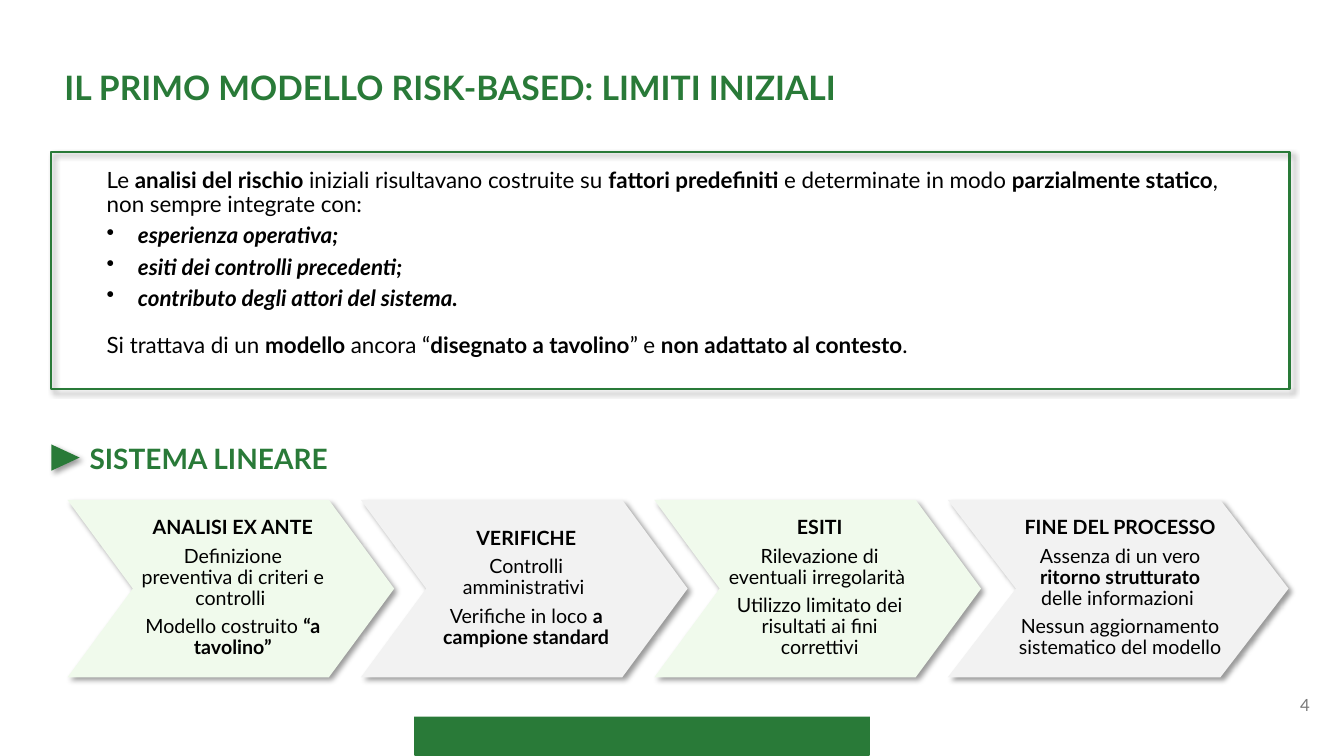
from lxml import etree
from pptx import Presentation
from pptx.dml.color import RGBColor
from pptx.enum.shapes import MSO_SHAPE
from pptx.enum.text import MSO_ANCHOR, PP_ALIGN
from pptx.oxml import parse_xml
from pptx.oxml.ns import qn
from pptx.util import Inches, Pt

RECTANGLE = MSO_SHAPE.RECTANGLE
TRIANGLE = MSO_SHAPE.ISOSCELES_TRIANGLE
MIDDLE = MSO_ANCHOR.MIDDLE
TOP = MSO_ANCHOR.TOP
LEFT, CENTER, RIGHT = PP_ALIGN.LEFT, PP_ALIGN.CENTER, PP_ALIGN.RIGHT

FONT = "Lato"
COLORS = {
    "green": "297A38",
    "pale_green": "F0FAEC",
    "pale_gray": "F2F2F2",
    "gray": "797979",
    "black": "000000",
    "white": "FFFFFF",
}
SHADOW = (
    '<a:outerShdw xmlns:a="http://schemas.openxmlformats.org/drawingml/2006/main" '
    'blurRad="50800" dist="38100" dir="2700000" algn="tl" rotWithShape="0">'
    '<a:srgbClr val="000000"><a:alpha val="40000"/></a:srgbClr></a:outerShdw>'
)

RISK_INTRO = (
    "Le *analisi del rischio *iniziali risultavano costruite su *fattori predefiniti *"
    "e determinate in modo *parzialmente statico*, non sempre integrate con:"
)
RISK_BULLETS = [
    "esperienza operativa;",
    "esiti dei controlli precedenti;",
    "contributo degli attori del sistema.",
]
RISK_CONCLUSION = (
    "Si trattava di un *modello *ancora “*disegnato a tavolino*” e "
    "*non adattato al contesto*."
)
STEPS = [
    ("ANALISI EX ANTE", "Definizione preventiva di criteri e controlli ",
     "Modello costruito *“a tavolino”*"),
    ("VERIFICHE", "Controlli amministrativi ",
     "Verifiche in loco *a campione standard*"),
    ("ESITI", "Rilevazione di eventuali irregolarità ",
     "Utilizzo limitato dei risultati ai fini correttivi"),
    ("FINE DEL PROCESSO", "Assenza di un vero *ritorno strutturato *delle informazioni ",
     "Nessun aggiornamento sistematico del modello"),
]


def color(name):
    return RGBColor.from_string(COLORS[name])


def style_shape(shape, fill=None, line=None, shadow=False):
    if fill:
        shape.fill.solid()
        shape.fill.fore_color.rgb = color(fill)
    else:
        shape.fill.background()
    if line:
        shape.line.color.rgb = color(line)
        shape.line.width = Pt(1.5)
    else:
        shape.line.fill.background()
    shape.shadow.inherit = False
    if shadow:
        shape._element.spPr.find(qn("a:effectLst")).append(parse_xml(SHADOW))


def add_box(slide, left, top, width, height, kind=RECTANGLE, **style):
    shape = slide.shapes.add_shape(
        kind, Inches(left), Inches(top), Inches(width), Inches(height))
    style_shape(shape, **style)
    return shape


def add_text_box(slide, left, top, width, height, anchor=TOP):
    text_box = slide.shapes.add_textbox(
        Inches(left), Inches(top), Inches(width), Inches(height))
    frame = text_box.text_frame
    frame.word_wrap = True
    frame.vertical_anchor = anchor
    return frame


def write_paragraph(frame, text, size, ink="black", align=LEFT, bold=False,
                    italic=False, bullet=False, spaced=False):
    paragraph = frame.paragraphs[0]
    if paragraph.runs:
        paragraph = frame.add_paragraph()
    if bullet:
        properties = paragraph._p.get_or_add_pPr()
        properties.set("marL", str(Inches(0.31)))
        properties.set("indent", str(-Inches(0.31)))
        etree.SubElement(properties, qn("a:buChar")).set("char", "•")
    paragraph.alignment = align
    if spaced:
        paragraph.line_spacing = 0.9
        paragraph.space_after = Pt(5)
    paragraph.font.name = FONT
    paragraph.font.size = Pt(size)
    paragraph.font.color.rgb = color(ink)
    paragraph.font.bold = bold
    paragraph.font.italic = italic
    for index, piece in enumerate(text.split("*")):
        if piece:
            run = paragraph.add_run()
            run.text = piece
            if index % 2:
                run.font.bold = True
    return paragraph


def add_heading(slide, text, size, left, top, width, height):
    frame = add_text_box(slide, left, top, width, height)
    write_paragraph(frame, text, size, "green", bold=True)


def add_background(slide, width, height):
    add_box(slide, 4.12, height - 0.41, 4.5, 0.4, fill="green", line="green")
    add_box(slide, 0.26, 0.26, width - 0.49, height - 0.65, fill="white")


def add_page_number(slide, number, left, top, width, height):
    frame = add_text_box(slide, left, top, width, height, MIDDLE)
    write_paragraph(frame, number, 12, "gray", RIGHT)


def add_risk_panel(slide, left, top, width, height):
    add_box(slide, left, top, width, height, line="green", shadow=True)
    frame = add_text_box(slide, left + 0.45, top + 0.12, width - 0.93, height - 0.25)
    write_paragraph(frame, RISK_INTRO, 16, spaced=True)
    for text in RISK_BULLETS:
        write_paragraph(frame, text, 16, bold=True, italic=True, bullet=True, spaced=True)
    conclusion = write_paragraph(frame, RISK_CONCLUSION, 16, spaced=True)
    conclusion.space_before = Pt(11.5)


def add_section_heading(slide, text, left, top, width, height):
    add_heading(slide, text, 20, left + 0.27, top, width, height)
    marker = add_box(slide, left, top + 0.07, 0.26, 0.28, TRIANGLE,
                     fill="green", shadow=True)
    marker.rotation = 90


def add_step(slide, step, fill, left, top, width, height):
    notch = width * 0.2
    right, middle, bottom = left + width, top + height / 2, top + height
    outline = [(right - notch, top), (right, middle), (right - notch, bottom),
               (left, bottom), (left + notch, middle)]
    builder = slide.shapes.build_freeform(Inches(left), Inches(top))
    builder.add_line_segments([(Inches(x), Inches(y)) for x, y in outline])
    shape = builder.convert_to_shape()
    style_shape(shape, fill=fill, shadow=True)
    frame = shape.text_frame
    frame.word_wrap = True
    frame.vertical_anchor = MIDDLE
    frame.margin_left, frame.margin_right = Inches(0.7), Inches(0.66)
    frame.margin_top = frame.margin_bottom = Inches(0.02)
    for index, text in enumerate(step):
        write_paragraph(frame, text, 14, align=CENTER, bold=index == 0, spaced=True)


def add_process(slide, left, top, width, height):
    pitch, step_width = 2.91, 3.24
    for index, step in enumerate(STEPS):
        fill = "pale_gray" if index % 2 else "pale_green"
        offset = index * pitch
        if index == len(STEPS) - 1:
            step_width = width - offset
        add_step(slide, step, fill, left + offset, top, step_width, height)


def main():
    presentation = Presentation()
    presentation.slide_width = Inches(13.33)
    presentation.slide_height = Inches(7.5)
    slide = presentation.slides.add_slide(presentation.slide_layouts[6])
    add_background(slide, 13.33, 7.5)
    add_heading(slide, "IL PRIMO MODELLO RISK-BASED: LIMITI INIZIALI", 24,
                0.54, 0.61, 12.09, 0.5)
    add_page_number(slide, "4", 10.09, 6.79, 3, 0.4)
    add_risk_panel(slide, 0.51, 1.51, 12.28, 2.35)
    add_section_heading(slide, "SISTEMA LINEARE", 0.52, 4.33, 7.23, 0.44)
    add_process(slide, 0.67, 4.96, 12.11, 1.76)
    presentation.save("out.pptx")


if __name__ == "__main__":
    main()
